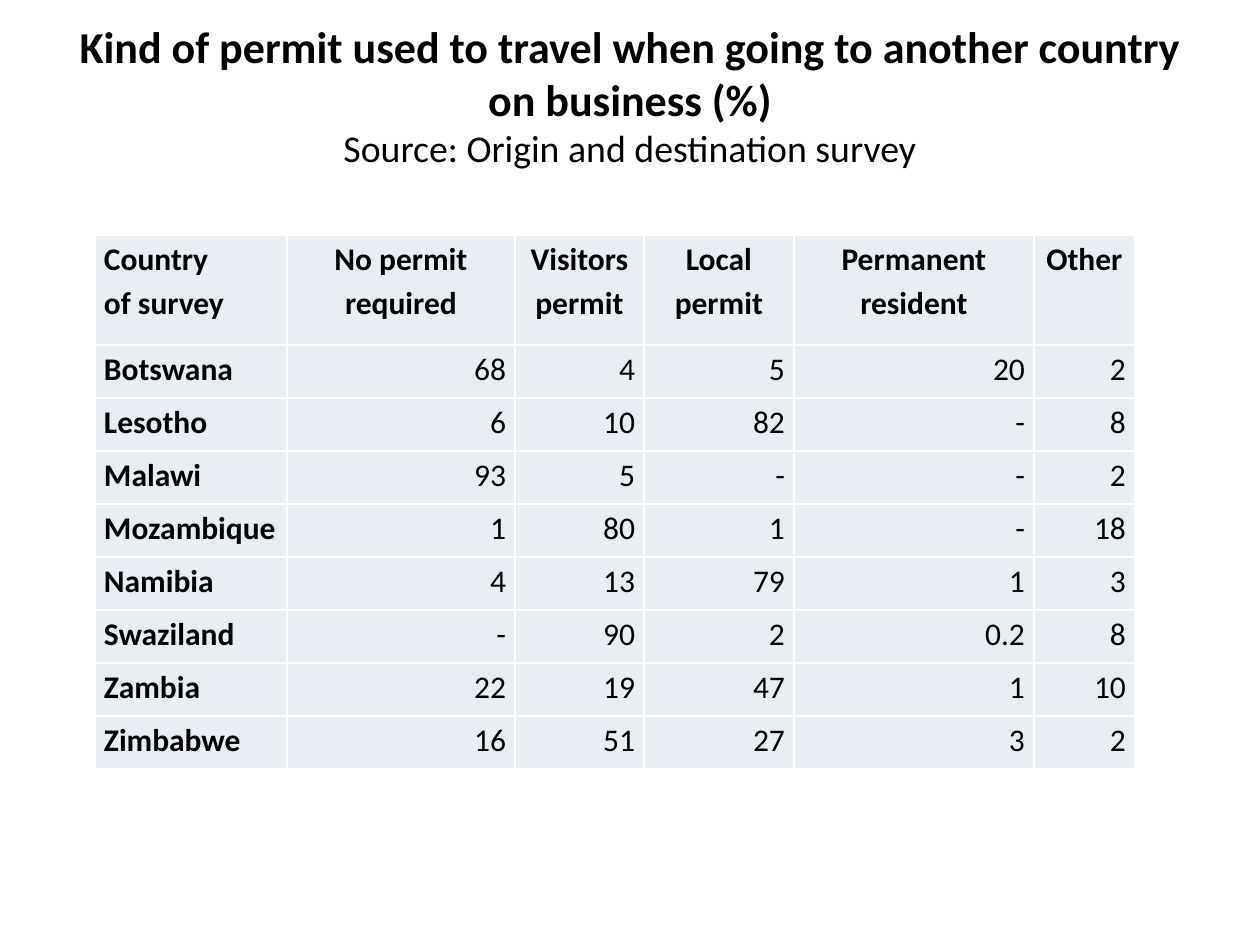
from dataclasses import dataclass

from lxml.etree import SubElement
from pptx import Presentation
from pptx.dml.color import RGBColor
from pptx.enum.text import MSO_ANCHOR as ANCHOR, MSO_AUTO_SIZE as FIT, PP_ALIGN as ALIGN
from pptx.oxml.ns import qn
from pptx.util import Emu, Pt


@dataclass(frozen=True)
class Theme:
    font: str = "Calibri"
    ink: str = "000000"
    cell: str = "E9EDF4"
    border: str = "FFFFFF"
    title: float = 25.2
    source: float = 21.6
    body: float = 18
    spacing: float = 1.15
    border_width: float = 1


THEME = Theme()
TITLE = "Kind of permit used to travel when going to another country on business (%)"
SOURCE = "Source: Origin and destination survey"
HEADERS = [["Country", "of survey"], ["No permit required"], ["Visitors", "permit"],
           ["Local permit"], ["Permanent resident"], ["Other"]]
SURVEY = [
    ["Botswana", "68", "4", "5", "20", "2"],
    ["Lesotho", "6", "10", "82", "-", "8"],
    ["Malawi", "93", "5", "-", "-", "2"],
    ["Mozambique", "1", "80", "1", "-", "18"],
    ["Namibia", "4", "13", "79", "1", "3"],
    ["Swaziland", "-", "90", "2", "0.2", "8"],
    ["Zambia", "22", "19", "47", "1", "10"],
    ["Zimbabwe", "16", "51", "27", "3", "2"],
]
COL_WIDTHS = [192, 228, 129, 150, 240, 101]
HEADER_HEIGHT, ROW_HEIGHT = 110, 53


def px(n):
    return Emu(round(n * 914400 / 126))


def apply(obj, values):
    for name, value in values.items():
        setattr(obj, name, value)


def add_run(p, text, size, bold):
    r = p.add_run()
    r.text = text
    apply(r.font, {"name": THEME.font, "size": Pt(size), "bold": bold})
    r.font.color.rgb = RGBColor.from_string(THEME.ink)


def set_title(sp):
    apply(sp, {"left": px(63), "top": px(38), "width": px(1134), "height": px(157)})
    tf = sp.text_frame
    apply(tf, {"word_wrap": True, "auto_size": FIT.NONE,
               "vertical_anchor": ANCHOR.MIDDLE, "margin_bottom": px(50)})
    p = tf.paragraphs[0]
    p.alignment = ALIGN.CENTER
    add_run(p, TITLE, THEME.title, True)
    p.add_line_break()
    add_run(p, SOURCE, THEME.source, False)


def set_borders(cell):
    tc_pr = cell._tc.get_or_add_tcPr()
    for i, side in enumerate(("lnL", "lnR", "lnT", "lnB")):
        ln = SubElement(tc_pr, qn(f"a:{side}"), w=str(Pt(THEME.border_width)))
        fill = SubElement(ln, qn("a:solidFill"))
        SubElement(fill, qn("a:srgbClr"), val=THEME.border)
        tc_pr.remove(ln)
        tc_pr.insert(i, ln)


def fill_cell(cell, lines, align, bold):
    apply(cell, {"margin_left": px(9), "margin_right": px(9), "margin_top": 0,
                 "margin_bottom": 0, "vertical_anchor": ANCHOR.TOP})
    cell.fill.solid()
    cell.fill.fore_color.rgb = RGBColor.from_string(THEME.cell)
    set_borders(cell)
    tf = cell.text_frame
    for i, line in enumerate(lines):
        p = tf.add_paragraph() if i else tf.paragraphs[0]
        apply(p, {"alignment": align, "line_spacing": THEME.spacing})
        add_run(p, line, THEME.body, bold)


def add_permit_table(slide):
    rows = [HEADERS] + [[[value] for value in row] for row in SURVEY]
    heights = [HEADER_HEIGHT] + [ROW_HEIGHT] * len(SURVEY)
    table = slide.shapes.add_table(len(rows), len(COL_WIDTHS), px(95), px(235),
                                   px(sum(COL_WIDTHS)), px(sum(heights))).table
    for col, width in zip(table.columns, COL_WIDTHS):
        col.width = px(width)
    for row, height in zip(table.rows, heights):
        row.height = px(height)
    for i, row in enumerate(rows):
        for j, lines in enumerate(row):
            align = ALIGN.LEFT if j == 0 else ALIGN.CENTER if i == 0 else ALIGN.RIGHT
            fill_cell(table.cell(i, j), lines, align, i == 0 or j == 0)


def main():
    prs = Presentation()
    apply(prs, {"slide_width": px(1260), "slide_height": px(945)})
    slide = prs.slides.add_slide(prs.slide_layouts[5])
    set_title(slide.shapes.title)
    add_permit_table(slide)
    prs.save("out.pptx")


if __name__ == "__main__":
    main()
